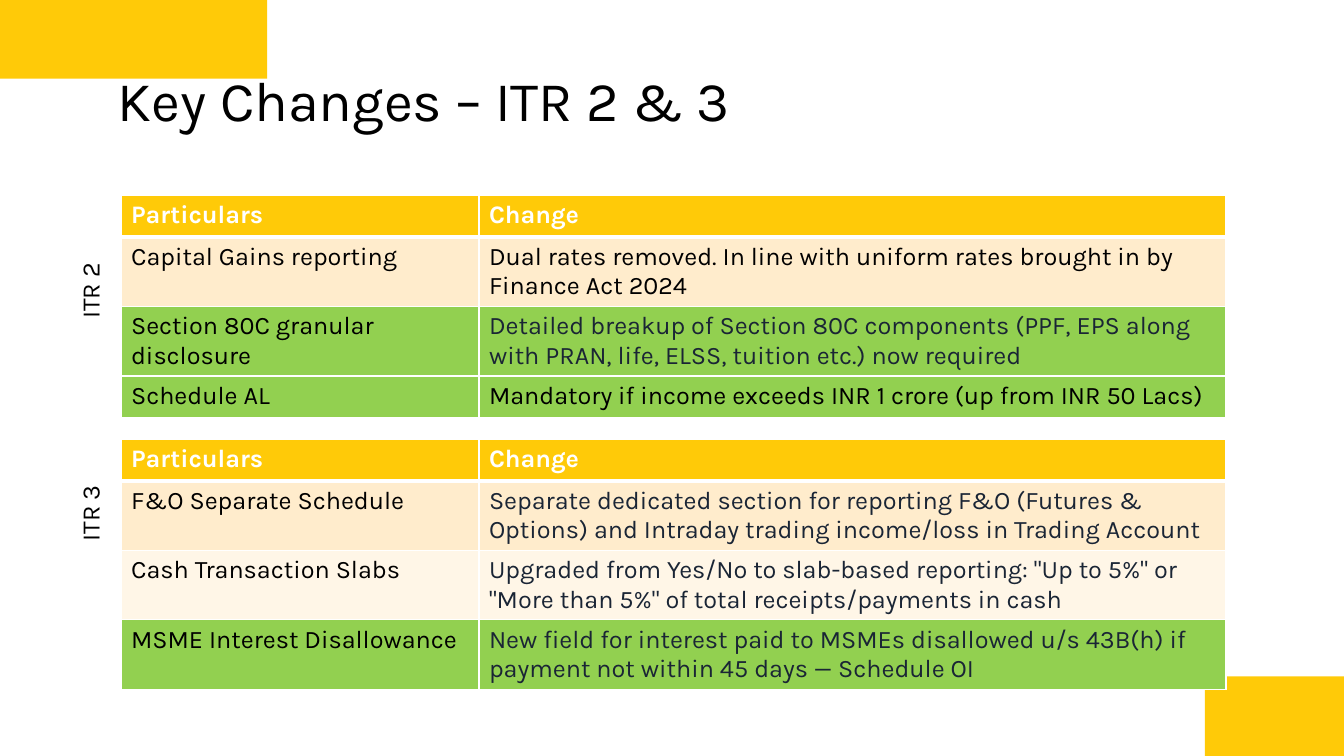
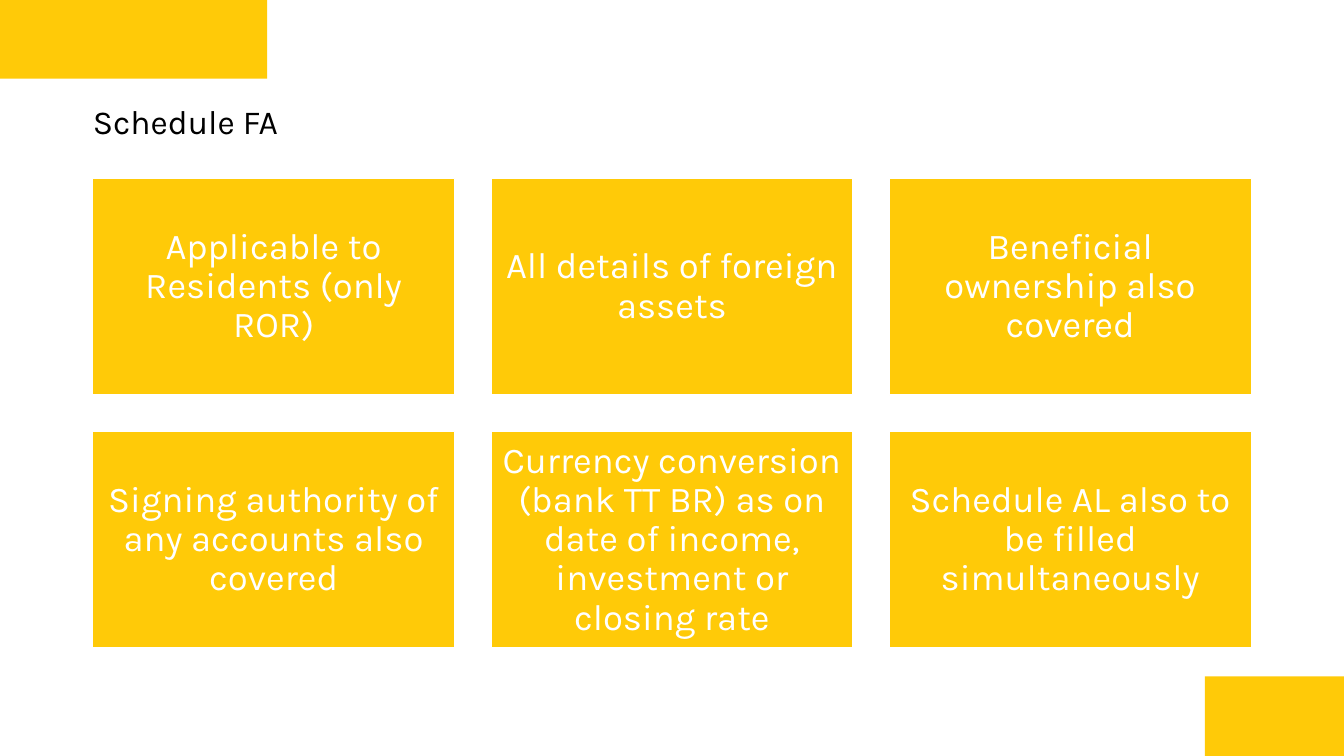
import pptx
import pptx.dml.color
import pptx.enum.shapes
import pptx.enum.text
import pptx.oxml.ns
import pptx.util
from lxml import etree

Inches = pptx.util.Inches
Pt = pptx.util.Pt
Align = pptx.enum.text.PP_ALIGN
Anchor = pptx.enum.text.MSO_ANCHOR
Fit = pptx.enum.text.MSO_AUTO_SIZE
qn = pptx.oxml.ns.qn

COLORS = {
    "gold": "FFCA08", "white": "FFFFFF", "black": "000000", "navy": "1A2535",
    "peach": "FFECCC", "cream": "FFF6E7", "green": "92D050",
}
FONT = "Karla"
BANDS = [(11.95, 6.71, 1.38, 0.79), (0, -0.01, 2.65, 0.79)]


def rgb(name):
    return pptx.dml.color.RGBColor.from_string(COLORS[name])


def paint(item, color):
    item.fill.solid()
    item.fill.fore_color.rgb = rgb(color)


def write(frame, text, size=18, color="black", bold=False, align=Align.LEFT,
          anchor=Anchor.TOP, inset=None, space=None, fit=Fit.NONE):
    frame.word_wrap = True
    frame.auto_size = fit
    frame.vertical_anchor = anchor
    if inset is not None:
        frame.margin_left = frame.margin_right = Inches(inset)
        frame.margin_top = frame.margin_bottom = Inches(inset)
    style(frame, text, size, color, bold, align, space)


def style(frame, text, size, color, bold, align=Align.LEFT, space=None):
    """Fill a shape's or a cell's text frame with one formatted paragraph."""
    para = frame.paragraphs[0]
    para.alignment = align
    if space:
        para.line_spacing = space
    run = para.add_run()
    run.text = text
    run.font.name = FONT
    run.font.size = Pt(size)
    run.font.bold = bold
    run.font.color.rgb = rgb(color)


def edge(cell, **widths):
    """Draw white cell borders, 1 point unless a side is given; call before the fill."""
    props = cell._tc.get_or_add_tcPr()
    for side in "LRTB":
        line = etree.SubElement(props, qn("a:ln" + side), w=str(Pt(widths.get(side, 1))))
        fill = etree.SubElement(line, qn("a:solidFill"))
        etree.SubElement(fill, qn("a:srgbClr"), val=COLORS["white"])


class Deck:
    def __init__(self):
        self.show = pptx.Presentation()
        self.show.slide_width = Inches(13.33)
        self.show.slide_height = Inches(7.5)
        self.slide = None

    def page(self, title, box, size):
        self.slide = self.show.slides.add_slide(self.show.slide_layouts[5])
        head = self.slide.shapes.title
        head.left, head.top, head.width, head.height = map(Inches, box)
        write(head.text_frame, title, size=size, anchor=Anchor.MIDDLE, inset=0)
        for band in BANDS:
            head.element.addprevious(self.rect(band).element)

    def rect(self, box, line=None):
        shape = self.slide.shapes.add_shape(
            pptx.enum.shapes.MSO_SHAPE.RECTANGLE, *map(Inches, box))
        shape.shadow.inherit = False
        paint(shape, "gold")
        if line:
            shape.line.color.rgb = rgb(line)
            shape.line.width = Pt(1)
        else:
            shape.line.fill.background()
        return shape

    def card(self, text, box):
        write(self.rect(box, line="white").text_frame, text, size=26, color="white",
              align=Align.CENTER, anchor=Anchor.MIDDLE, inset=0.11, space=0.9)

    def label(self, text, left, top):
        box = self.slide.shapes.add_textbox(
            Inches(left), Inches(top), Inches(1), Inches(0.4))
        box.rotation = 270
        write(box.text_frame, text, fit=Fit.SHAPE_TO_FIT_TEXT)

    def table(self, top, rows):
        """Each row is (height, fill, colour of the change, particulars, change)."""
        rows = [(0.41, "gold", "white", "Particulars", "Change")] + rows
        grid = self.slide.shapes.add_table(
            len(rows), 2, Inches(1.2), Inches(top), Inches(10.96),
            Inches(sum(row[0] for row in rows))).table
        for col, width in zip(grid.columns, (3.55, 7.41)):
            col.width = Inches(width)
        for r, (height, fill, color, *texts) in enumerate(rows):
            grid.rows[r].height = Inches(height)
            for c, text in enumerate(texts):
                cell = grid.cell(r, c)
                edge(cell, T=3 if r == 1 else 1, B=3 if r == 0 else 1)
                paint(cell, fill)
                ink = "black" if r and c == 0 else color
                style(cell.text_frame, text, 18, ink, r == 0)


def main():
    deck = Deck()

    deck.page("Key Changes – ITR 2 & 3", (1.17, 0.4, 11, 1.17), 40)
    deck.table(1.94, [
        (0.69, "peach", "black", "Capital Gains reporting",
         "Dual rates removed. In line with uniform rates brought in by "
         "Finance Act 2024"),
        (0.69, "green", "navy", "Section 80C granular disclosure",
         "Detailed breakup of Section 80C components (PPF, EPS along with "
         "PRAN, life, ELSS, tuition etc.) now required"),
        (0.41, "green", "black", "Schedule AL",
         "Mandatory if income exceeds INR 1 crore (up from INR 50 Lacs)"),
    ])
    deck.table(4.36, [
        (0.69, "peach", "navy", "F&O Separate Schedule",
         "Separate dedicated section for reporting F&O (Futures & Options) "
         "and Intraday trading income/loss in Trading Account"),
        (0.69, "cream", "navy", "Cash Transaction Slabs",
         'Upgraded from Yes/No to slab-based reporting: "Up to 5%" or '
         '"More than 5%" of total receipts/payments in cash'),
        (0.69, "green", "navy", "MSME Interest Disallowance",
         "New field for interest paid to MSMEs disallowed u/s 43B(h) if "
         "payment not within 45 days — Schedule OI"),
    ])
    deck.label("ITR 2", 0.39, 2.56)
    deck.label("ITR 3", 0.39, 4.77)

    deck.page("Schedule FA", (0.92, 0.91, 11.49, 0.58), 24)
    cards = [
        "Applicable to Residents (only ROR)",
        "All details of foreign assets",
        "Beneficial ownership also covered",
        "Signing authority of any accounts also covered",
        "Currency conversion (bank TT BR) as on date of income, investment "
        "or closing rate",
        "Schedule AL also to be filled simultaneously",
    ]
    for i, text in enumerate(cards):
        row, col = divmod(i, 3)
        deck.card(text, (0.92 + 3.95 * col, 1.77 + 2.51 * row, 3.59, 2.15))

    deck.show.save("out.pptx")


if __name__ == "__main__":
    main()
